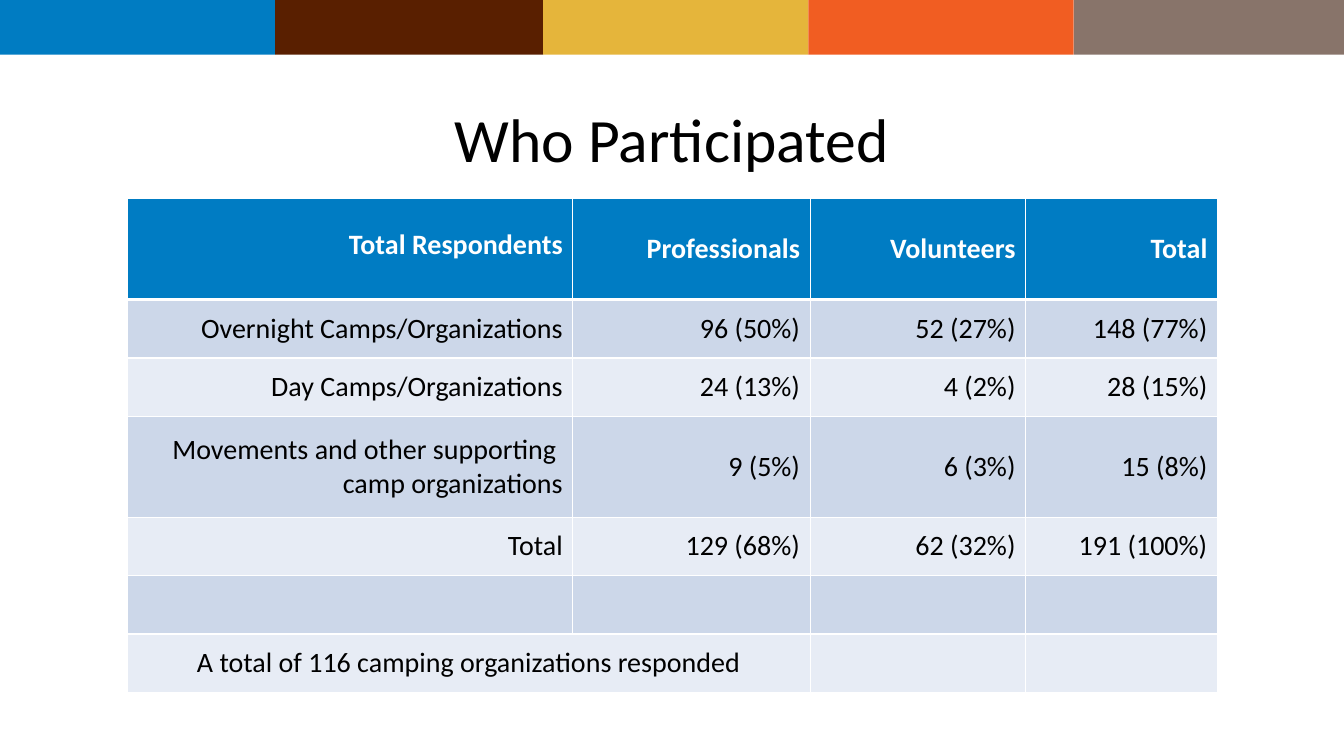
from itertools import pairwise

from lxml.etree import SubElement
from pptx import Presentation
from pptx.dml.color import RGBColor as RGB
from pptx.enum.shapes import MSO_SHAPE as Shape
from pptx.enum.text import MSO_ANCHOR as Anchor, PP_ALIGN as Align
from pptx.oxml.ns import qn
from pptx.util import Pt

COLORS = {
    "blue": "007CC2", "brown": "591F00", "gold": "E5B53B",
    "orange": "F15D22", "taupe": "88746A", "head": "007CC3",
    "dark": "CCD7E9", "light": "E7ECF5", "white": "FFFFFF", "black": "000000",
}


def style(frame, size, color, align, bold=False):
    for para in frame.paragraphs:
        para.alignment = align
        for run in para.runs:
            run.font.name = "Calibri"
            run.font.size = Pt(size)
            run.font.bold = bold
            run.font.color.rgb = RGB.from_string(COLORS[color])


def edge(cell, **widths):
    """Draw white cell borders; the widths by side are in points."""
    props = cell._tc.get_or_add_tcPr()
    for spot, (side, width) in enumerate(widths.items()):
        line = SubElement(props, qn("a:ln" + side), w=str(Pt(width)))
        fill = SubElement(line, qn("a:solidFill"))
        SubElement(fill, qn("a:srgbClr"), val=COLORS["white"])
        props.insert(spot, line)


prs = Presentation()
prs.slide_width, prs.slide_height = Pt(960), Pt(540)
slide = prs.slides.add_slide(prs.slide_layouts[6])

# Colour band
stops = [0, 196.5, 388, 577.5, 767, 960]
for name, (left, right) in zip(COLORS, pairwise(stops)):
    bar = slide.shapes.add_shape(
        Shape.RECTANGLE, Pt(left), Pt(0), Pt(right - left), Pt(39))
    bar.shadow.inherit = False
    bar.fill.solid()
    bar.fill.fore_color.rgb = RGB.from_string(COLORS[name])
    bar.line.fill.background()

# Title
title = slide.shapes.add_textbox(Pt(96), Pt(61), Pt(768), Pt(81)).text_frame
title.word_wrap = True
title.vertical_anchor = Anchor.MIDDLE
title.text = "Who Participated"
title.paragraphs[0].line_spacing = 0.9
style(title, 44, "black", Align.CENTER)

# Table
rows = [
    ["Total Respondents", "Professionals", "Volunteers", "Total"],
    ["Overnight Camps/Organizations", "96 (50%)", "52 (27%)", "148 (77%)"],
    ["Day Camps/Organizations", "24 (13%)", "4 (2%)", "28 (15%)"],
    ["Movements and other supporting \vcamp organizations",
     "9 (5%)", "6 (3%)", "15 (8%)"],
    ["Total", "129 (68%)", "62 (32%)", "191 (100%)"],
    ["", "", "", ""],
    ["A total of 116 camping organizations responded", "", "", ""],
]
widths = [318.5, 169.5, 154, 137]
heights = [72, 41.75, 41.75, 72, 41.75, 41.75, 41.75]
last = len(rows) - 1

table = slide.shapes.add_table(
    len(rows), len(widths), Pt(90.75), Pt(142),
    Pt(sum(widths)), Pt(sum(heights))).table
for col, width in zip(table.columns, widths):
    col.width = Pt(width)
for row, height in zip(table.rows, heights):
    row.height = Pt(height)

for r, row in enumerate(rows):
    head = r == 0
    fill = "head" if head else "dark" if r % 2 else "light"
    align = Align.CENTER if r == last else Align.RIGHT
    for c, text in enumerate(row):
        cell = table.cell(r, c)
        cell.text_frame.text = text
        cell.vertical_anchor = Anchor.MIDDLE
        cell.fill.solid()
        cell.fill.fore_color.rgb = RGB.from_string(COLORS[fill])
        style(cell.text_frame, 20, "white" if head else "black", align, head)
        edge(cell, L=1, R=1, T=3 if r == 1 else 1, B=3 if head else 1)

corner = table.cell(0, 0)
corner.vertical_anchor = Anchor.BOTTOM
corner.margin_bottom = Pt(27)
table.cell(last, 0).merge(table.cell(last, 1))

prs.save("out.pptx")
